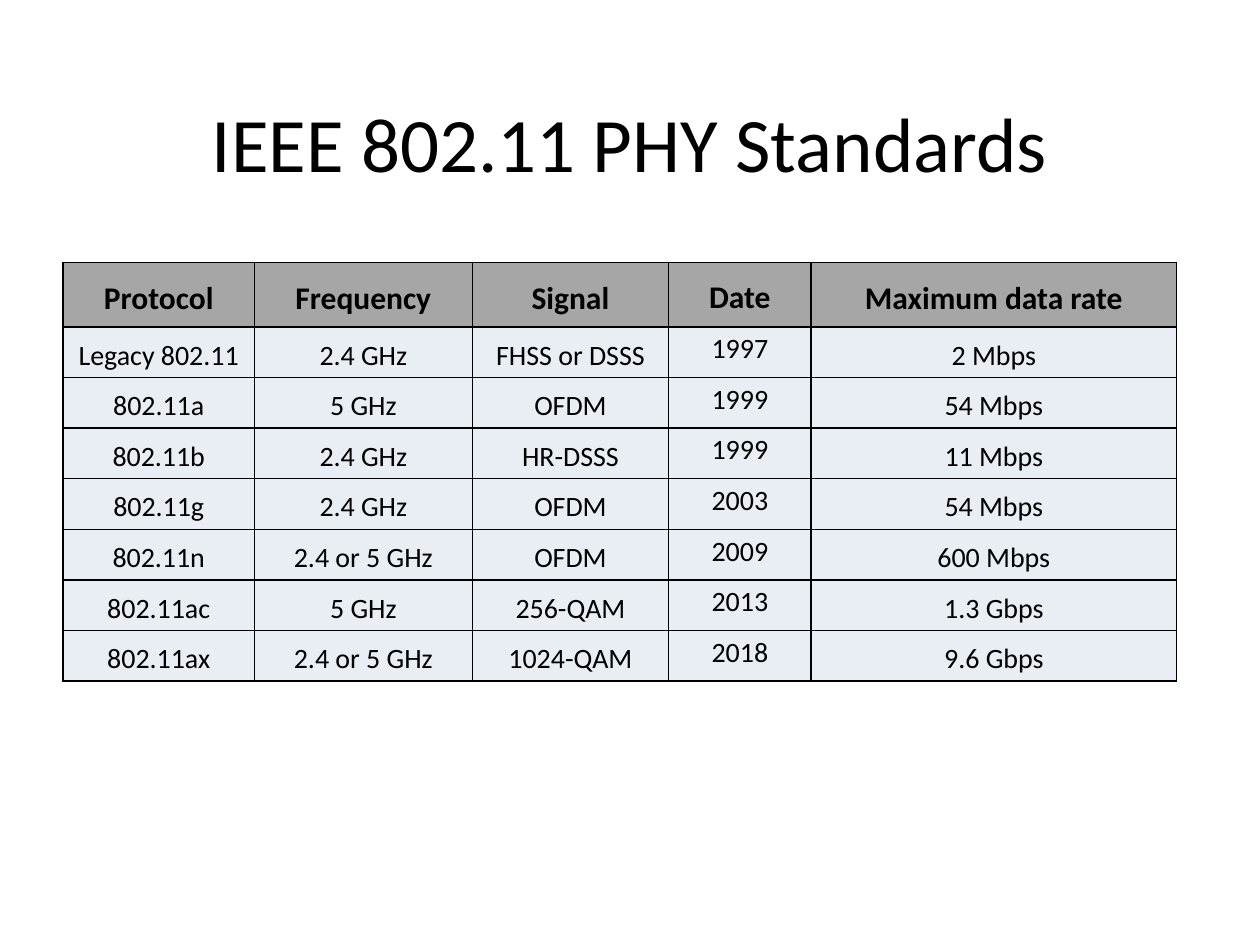
"""Build a slide with a table of the IEEE 802.11 physical layer standards."""
from pptx import Presentation
from pptx.dml.color import RGBColor
from pptx.enum.text import MSO_ANCHOR, PP_ALIGN
from pptx.oxml import parse_xml
from pptx.oxml.ns import nsdecls
from pptx.util import Cm, Pt

BLACK = RGBColor(0x00, 0x00, 0x00)
HEADER_GREY = RGBColor(0xA6, 0xA6, 0xA6)
BODY_BLUE = RGBColor(0xE9, 0xED, 0xF4)
FONT = "Calibri"
DATE_COLUMN = 3

COLUMN_WIDTHS = [3.86, 4.39, 3.96, 2.87, 7.37]
HEADER_HEIGHT, ROW_HEIGHT = 1.3, 1.02
STANDARDS = [
    ["Protocol", "Frequency", "Signal", "Date", "Maximum data rate"],
    ["Legacy 802.11", "2.4 GHz", "FHSS or DSSS", "1997", "2 Mbps"],
    ["802.11a", "5 GHz", "OFDM", "1999", "54 Mbps"],
    ["802.11b", "2.4 GHz", "HR-DSSS", "1999", "11 Mbps"],
    ["802.11g", "2.4 GHz", "OFDM", "2003", "54 Mbps"],
    ["802.11n", "2.4 or 5 GHz", "OFDM", "2009", "600 Mbps"],
    ["802.11ac", "5 GHz", "256-QAM", "2013", "1.3 Gbps"],
    ["802.11ax", "2.4 or 5 GHz", "1024-QAM", "2018", "9.6 Gbps"],
]


def add_text(paragraph, text, size, bold=False):
    paragraph.alignment = PP_ALIGN.CENTER
    span = paragraph.add_run()
    span.text = text
    span.font.name = FONT
    span.font.size = Pt(size)
    span.font.bold = bold
    span.font.color.rgb = BLACK


def add_borders(cell):
    properties = cell._tc.get_or_add_tcPr()
    for side in ("lnL", "lnR", "lnT", "lnB"):
        properties.append(parse_xml(
            f'<a:{side} {nsdecls("a")} w="{Pt(1)}"><a:solidFill>'
            f'<a:srgbClr val="{BLACK}"/></a:solidFill></a:{side}>'))


deck = Presentation()
deck.slide_width, deck.slide_height = Cm(25.4), Cm(19.05)
page = deck.slides.add_slide(deck.slide_layouts[5])

title = page.shapes.title
title.left, title.top, title.width, title.height = Cm(1.27), Cm(1.27), Cm(22.86), Cm(3.18)
title.text_frame.vertical_anchor = MSO_ANCHOR.MIDDLE
add_text(title.text_frame.paragraphs[0], "IEEE 802.11 PHY Standards", 44)

table = page.shapes.add_table(
    len(STANDARDS), len(COLUMN_WIDTHS), Cm(1.27), Cm(5.29), Cm(sum(COLUMN_WIDTHS)),
    Cm(HEADER_HEIGHT + ROW_HEIGHT * (len(STANDARDS) - 1))).table
for column, width in zip(table.columns, COLUMN_WIDTHS):
    column.width = Cm(width)

for row_index, standard in enumerate(STANDARDS):
    is_header = row_index == 0
    table.rows[row_index].height = Cm(HEADER_HEIGHT if is_header else ROW_HEIGHT)
    for column_index, text in enumerate(standard):
        cell = table.cell(row_index, column_index)
        is_date = column_index == DATE_COLUMN
        inset = Cm(0 if is_date else 0.03)
        cell.margin_left = cell.margin_right = cell.margin_top = inset
        cell.margin_bottom = Cm(0)
        cell.vertical_anchor = (
            MSO_ANCHOR.TOP if is_date and not is_header else MSO_ANCHOR.MIDDLE)
        add_borders(cell)
        cell.fill.solid()
        cell.fill.fore_color.rgb = HEADER_GREY if is_header else BODY_BLUE
        paragraph = cell.text_frame.paragraphs[0]
        paragraph.line_spacing = 1.15
        add_text(paragraph, text, 18 if is_header else 16, is_header)

deck.save("out.pptx")
